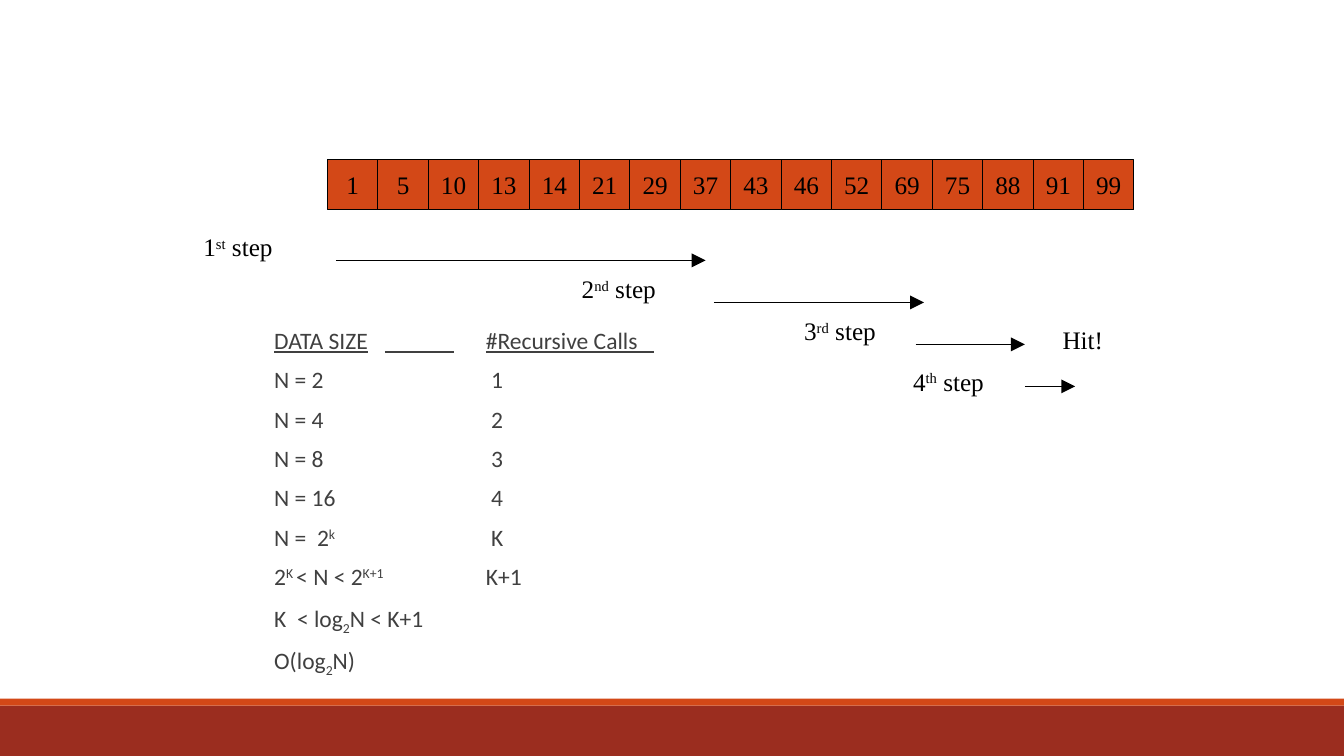
from lxml import etree
from pptx import Presentation
from pptx.dml.color import RGBColor
from pptx.enum.shapes import MSO_CONNECTOR, MSO_SHAPE
from pptx.enum.text import MSO_ANCHOR, PP_ALIGN
from pptx.oxml.ns import qn
from pptx.util import Pt

RECT, STRAIGHT = MSO_SHAPE.RECTANGLE, MSO_CONNECTOR.STRAIGHT
MIDDLE, CENTER = MSO_ANCHOR.MIDDLE, PP_ALIGN.CENTER

ORANGE = RGBColor(0xD3, 0x48, 0x17)
RED = RGBColor(0x9B, 0x2D, 0x1F)
GREY = RGBColor(0x40, 0x40, 0x40)
BLACK = RGBColor(0, 0, 0)

SERIF = {"name": "Times New Roman", "size": Pt(18)}
BODY = {"name": "Calibri", "size": Pt(16.8)}
BODY_SPACING = {"line_spacing": 0.7, "space_before": Pt(12), "space_after": Pt(2)}
ARROWHEAD = {"type": "triangle", "w": "lg", "len": "lg"}
SUP, SUB = 30000, -25000

VALUES = [1, 5, 10, 13, 14, 21, 29, 37, 43, 46, 52, 69, 75, 88, 91, 99]
CELL, ARRAY_LEFT, ARRAY_TOP = 36, 234, 114

# Each text line is a list of (text, baseline shift) runs.
STEPS = [  # runs, label left, top, width, arrow start, arrow end
    ([("1", 0), ("st", SUP), (" step", 0)], 137, 162, 66, 240, 504),
    ([("2", 0), ("nd", SUP), (" step", 0)], 407, 192, 70, 510, 660),
    ([("3", 0), ("rd", SUP), (" step", 0)], 566, 222, 68, 654, 732),
    ([("4", 0), ("th", SUP), (" step", 0)], 644, 258, 67, 732, 768),
]
ARROW_TOP, ARROW_GAP = 186, 30

CALLS = [
    [("DATA SIZE", 0), ("\t", 0), ("#Recursive Calls", 0)],
    [("N = 2\t 1", 0)],
    [("N = 4\t 2", 0)],
    [("N = 8\t 3", 0)],
    [("N = 16\t 4", 0)],
    [("N =  2", 0), ("k", SUP), ("\t K", 0)],
    [("2", 0), ("K ", SUP), ("< N < 2", 0), ("K+1", SUP), ("\tK+1", 0)],
    [("K  < log", 0), ("2", SUB), ("N < K+1", 0)],
    [("O(log", 0), ("2", SUB), ("N)", 0)],
]
CALLS_COLUMN = str(Pt(151.2))
HEADER_RULES = [(275, 324.3), (455, 467.1)]
HEADER_RULE_TOP = 251.4


def apply(target, values):
    for name, value in values.items():
        setattr(target, name, value)


class Deck:
    def __init__(self, width, height):
        self.prs = Presentation()
        apply(self.prs, {"slide_width": Pt(width), "slide_height": Pt(height)})
        self.s = self.prs.slides.add_slide(self.prs.slide_layouts[6])

    def runs(self, p, runs, style, color):
        for text, shift in runs:
            r = p.add_run()
            r.text = text
            apply(r.font, style)
            r.font.color.rgb = color
            if shift:
                r._r.get_or_add_rPr().set("baseline", str(shift))

    def rect(self, x, y, w, h, fill, text=None):
        sp = self.s.shapes.add_shape(RECT, Pt(x), Pt(y), Pt(w), Pt(h))
        sp.shadow.inherit = False
        sp.fill.solid()
        sp.fill.fore_color.rgb = fill
        if text is None:
            sp.line.fill.background()
            return
        sp.line.color.rgb = BLACK
        sp.line.width = Pt(0.75)
        tf = sp.text_frame
        apply(tf, {"word_wrap": False, "vertical_anchor": MIDDLE})
        tf.paragraphs[0].alignment = CENTER
        self.runs(tf.paragraphs[0], [(text, 0)], SERIF, BLACK)

    def label(self, x, y, w, runs):
        sp = self.s.shapes.add_textbox(Pt(x), Pt(y), Pt(w), Pt(29))
        tf = sp.text_frame
        tf.word_wrap = False
        tf.paragraphs[0].alignment = CENTER
        self.runs(tf.paragraphs[0], runs, SERIF, BLACK)

    def line(self, x1, x2, y, color=BLACK, width=0.75, arrow=False):
        """Draw a horizontal line, with an arrowhead at x2 if asked."""
        c = self.s.shapes.add_connector(STRAIGHT, Pt(x1), Pt(y), Pt(x2), Pt(y))
        c.line.color.rgb = color
        c.line.width = Pt(width)
        if arrow:
            etree.SubElement(c.line._get_or_add_ln(), qn("a:tailEnd"), ARROWHEAD)
        etree.SubElement(c._element.spPr, qn("a:effectLst"))

    def two_columns(self, x, y, w, h, lines):
        """Write tabbed lines, the first of them underlined as a header."""
        tf = self.s.shapes.add_textbox(Pt(x), Pt(y), Pt(w), Pt(h)).text_frame
        apply(tf, {"word_wrap": True, "margin_left": 0, "margin_right": 0})
        for i, runs in enumerate(lines):
            p = tf.add_paragraph() if i else tf.paragraphs[0]
            apply(p, BODY_SPACING)
            if i == 0:
                p.space_before = Pt(0)
            pPr = p._p.get_or_add_pPr()
            pPr.set("defTabSz", CALLS_COLUMN)
            tabs = etree.SubElement(pPr, qn("a:tabLst"))
            etree.SubElement(tabs, qn("a:tab"), pos=CALLS_COLUMN, algn="l")
            self.runs(p, runs, BODY, GREY)
        for r in tf.paragraphs[0].runs:
            r.font.underline = r.text != "\t"


def main():
    deck = Deck(960, 540)
    deck.rect(0, 504, 960, 36, RED)
    deck.rect(0, 499, 960, 5, ORANGE)

    deck.two_columns(195.84, 234.8, 522, 257.76, CALLS)
    for x1, x2 in HEADER_RULES:
        deck.line(x1, x2, HEADER_RULE_TOP, GREY, 1)

    for i, value in enumerate(VALUES):
        deck.rect(ARRAY_LEFT + i * CELL, ARRAY_TOP, CELL, CELL, ORANGE, str(value))

    for i, (runs, x, y, w, start, end) in enumerate(STEPS):
        deck.label(x, y, w, runs)
        deck.line(start, end, ARROW_TOP + i * ARROW_GAP, arrow=True)
    deck.label(751.5, 228, 44, [("Hit!", 0)])

    deck.prs.save("out.pptx")


if __name__ == "__main__":
    main()
